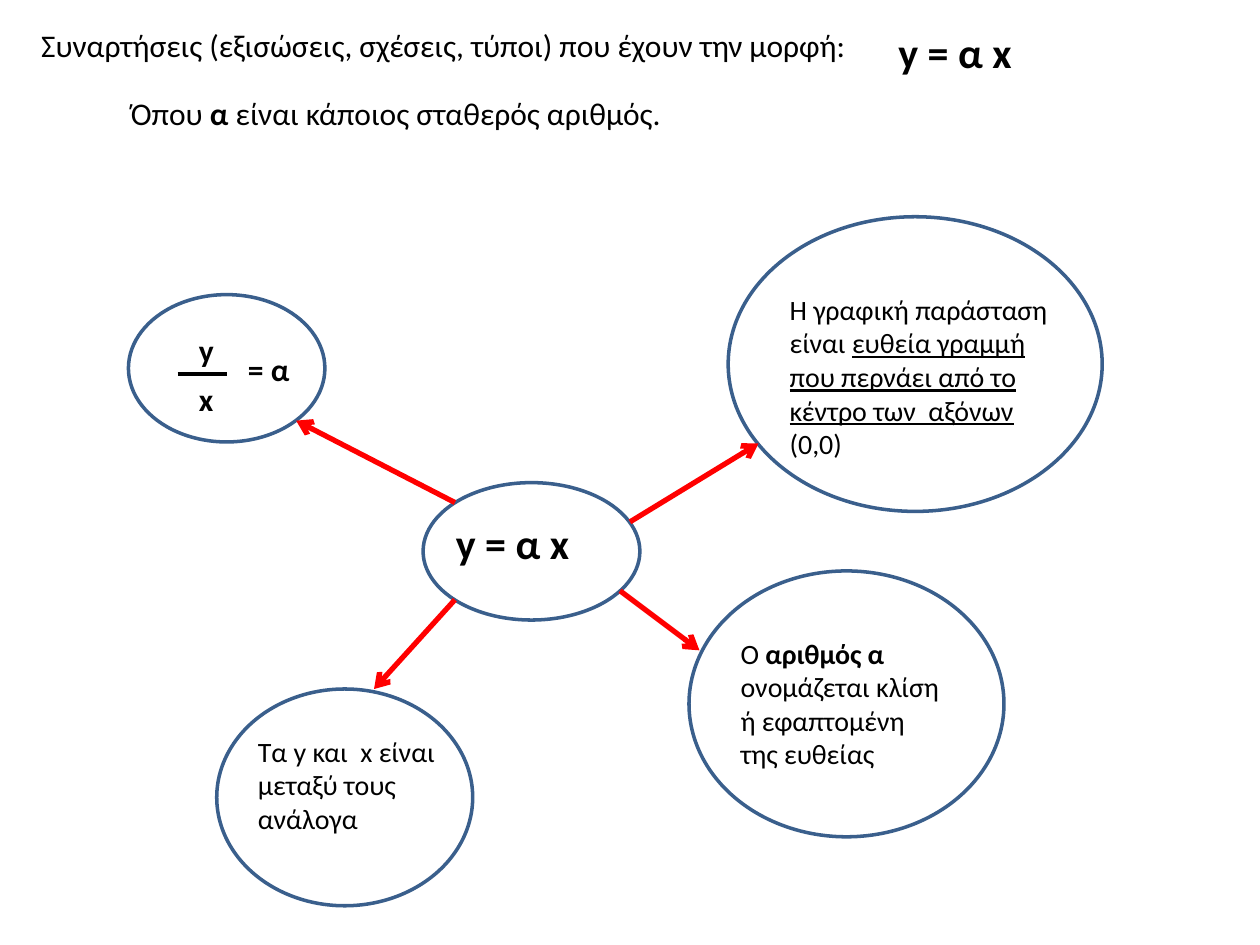
from lxml import etree
from pptx import Presentation, util as u
from pptx.dml.color import RGBColor
from pptx.enum import shapes, text
from pptx.oxml.ns import qn

COLORS = {"text": "000000", "bubble": "3A5F8C", "arrow": "FF0000"}


class ConceptMap:
    font_name = "Calibri"

    def __init__(self, slide):
        self.slide = slide

    def label(self, left, top, width, height, runs, size=18, bold=False):
        """Add a text box; runs are (text, style) pairs, style "b", "u" or ""."""
        box = self.slide.shapes.add_textbox(u.Cm(left), u.Cm(top), u.Cm(width), u.Cm(height))
        frame = box.text_frame
        frame.word_wrap = True
        frame.auto_size = text.MSO_AUTO_SIZE.SHAPE_TO_FIT_TEXT
        paragraph = frame.paragraphs[0]
        paragraph.font.name = self.font_name
        paragraph.font.size = u.Pt(size)
        paragraph.font.bold = bold
        paragraph.font.color.rgb = RGBColor.from_string(COLORS["text"])
        for words, style in runs:
            run = paragraph.add_run()
            run.text = words
            if style == "b":
                run.font.bold = True
            elif style == "u":
                run.font.underline = True

    def formula(self, left, top, width, height, words, size=18):
        self.label(left, top, width, height, [(words, "")], size, bold=True)

    def bubble(self, left, top, width, height):
        shape = self.slide.shapes.add_shape(
            shapes.MSO_SHAPE.OVAL, u.Cm(left), u.Cm(top), u.Cm(width), u.Cm(height))
        shape.shadow.inherit = False
        shape.fill.background()
        shape.line.color.rgb = RGBColor.from_string(COLORS["bubble"])
        shape.line.width = u.Pt(2)

    def line(self, start, end, color="text", width=2):
        connector = self.slide.shapes.add_connector(
            shapes.MSO_CONNECTOR.STRAIGHT, *(u.Cm(value) for value in (*start, *end)))
        connector.line.color.rgb = RGBColor.from_string(COLORS[color])
        connector.line.width = u.Pt(width)
        etree.SubElement(connector._element.spPr, qn("a:effectLst"))
        return connector

    def arrow(self, start, end):
        connector = self.line(start, end, "arrow", 3)
        etree.SubElement(connector.line._get_or_add_ln(), qn("a:tailEnd"), type="arrow")


def main():
    presentation = Presentation()
    presentation.slide_width, presentation.slide_height = u.Cm(25.4), u.Cm(19.05)
    concept_map = ConceptMap(presentation.slides.add_slide(presentation.slide_layouts[6]))

    # Heading
    concept_map.label(0.58, 0.41, 19.25, 1.02, [
        ("Συναρτήσεις (εξισώσεις, σχέσεις, τύποι) που έχουν την μορφή:", "")])
    concept_map.formula(17.86, 0.41, 5.16, 1.28, "y = α x", 24)
    concept_map.label(2.39, 1.78, 14.3, 1.02, [
        ("Όπου ", ""), ("α", "b"), (" είναι κάποιος σταθερός αριθμός.", "")])

    # Central function
    concept_map.bubble(8.53, 9.73, 4.37, 2.77)
    concept_map.formula(8.94, 10.31, 3.58, 1.28, "y = α x", 24)

    # Constant ratio
    concept_map.bubble(2.59, 5.94, 3.96, 2.97)
    concept_map.formula(3.76, 6.55, 0.79, 1.02, "y")
    concept_map.line((3.58, 7.54), (4.57, 7.54))
    concept_map.formula(3.76, 7.54, 0.79, 1.02, "x")
    concept_map.formula(4.75, 6.93, 2.59, 1.02, "= α")

    # Graph
    concept_map.bubble(14.68, 4.37, 7.54, 5.94)
    concept_map.label(15.67, 5.77, 6.15, 3.68, [
        ("Η γραφική παράσταση είναι ", ""),
        ("ευθεία γραμμή που περνάει από το κέντρο των  αξόνων ", "u"),
        ("(0,0)", "")], 16)

    # Slope
    concept_map.bubble(13.89, 11.51, 6.35, 5.36)
    concept_map.label(14.68, 12.7, 4.57, 3, [
        ("Ο ", ""), ("αριθμός α", "b"),
        (" ονομάζεται κλίση ή εφαπτομένη της ευθείας", "")], 16)

    # Proportional quantities
    concept_map.bubble(4.37, 13.89, 5.16, 4.37)
    concept_map.label(4.95, 14.68, 4.57, 2.31, [
        ("Τα y και  x είναι μεταξύ τους ανάλογα", "")], 16)

    for start, end in [
        ((9.17, 10.13), (5.97, 8.48)),
        ((12.7, 10.52), (15.29, 8.94)),
        ((12.5, 11.91), (14.1, 13.11)),
        ((9.17, 12.09), (7.54, 13.89)),
    ]:
        concept_map.arrow(start, end)

    presentation.save("out.pptx")


if __name__ == "__main__":
    main()
